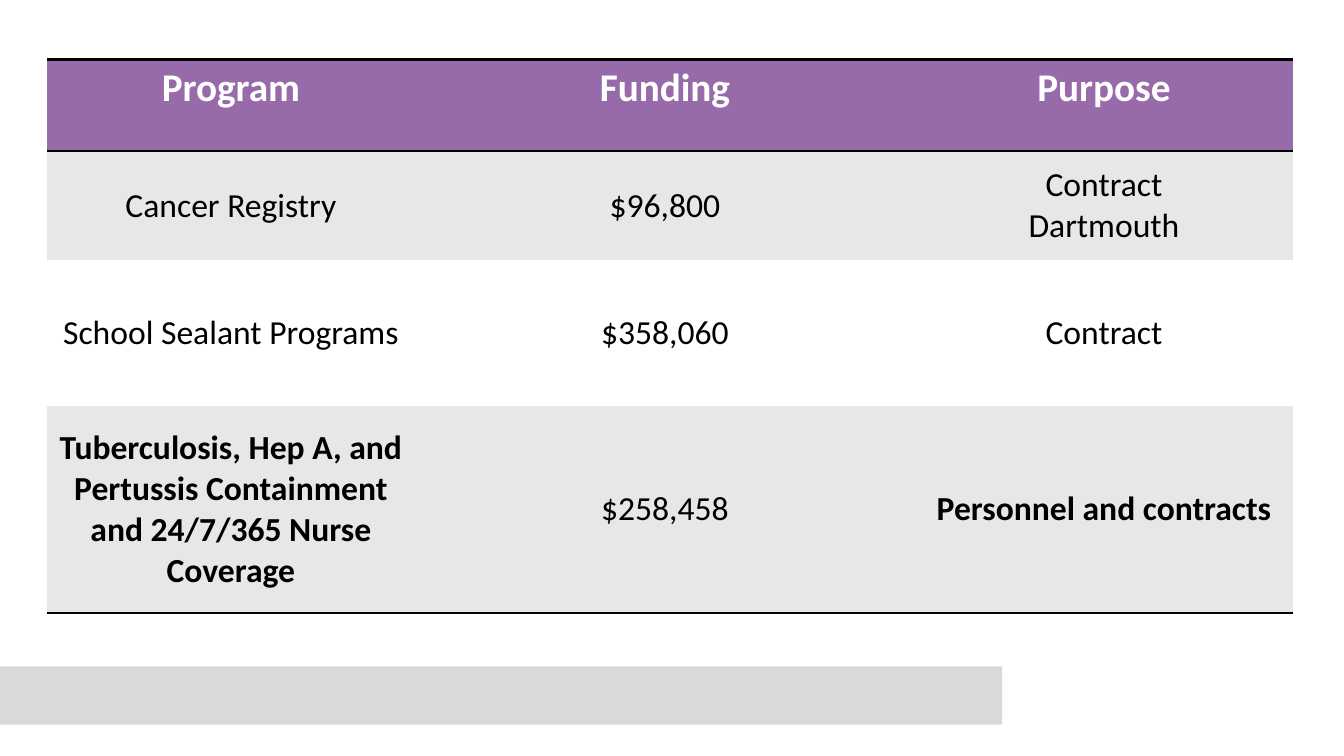
"""Builds a slide with a table of health programs, their funding and purpose."""
from dataclasses import dataclass

from lxml import etree
from pptx import Presentation
from pptx.dml.color import RGBColor
from pptx.enum import shapes, text
from pptx.oxml import ns
from pptx.util import Inches, Pt

HEADER = ("Program", "Funding", "Purpose")
PROGRAMS = [
    ("Cancer Registry", "$96,800", "Contract\nDartmouth"),
    ("School Sealant Programs", "$358,060", "Contract"),
    ("Tuberculosis, Hep A, and Pertussis Containment and 24/7/365 Nurse Coverage",
     "$258,458", "Personnel and contracts"),
]
BOLD = {HEADER[0], HEADER[1], HEADER[2], PROGRAMS[2][0], PROGRAMS[2][2]}
COL_WIDTHS = (3.64, 4.97, 3.74)
ROW_HEIGHTS = (0.91, 1.08, 1.45, 2.05)
TABLE_AT = (0.47, 0.59)
FOOTER_BAR = (0, 6.61, 9.94, 0.58)


@dataclass(frozen=True)
class Theme:
    font: str = "Calibri"
    header_size: int = 28
    body_size: int = 24
    header_fill: str = "976BA9"
    header_text: str = "FFFFFF"
    body_text: str = "000000"
    bands: tuple = ("FFFFFF", "E7E7E7")
    bar: str = "D9D9D9"
    rule: str = "000000"
    rule_width: int = 2


THEME = Theme()


def set_borders(cell, ruled):
    tc_pr = cell._tc.get_or_add_tcPr()
    for side in ("L", "R", "T", "B"):
        ln = etree.SubElement(tc_pr, ns.qn(f"a:ln{side}"))
        if side in ruled:
            ln.set("w", str(Pt(THEME.rule_width)))
            fill = etree.SubElement(ln, ns.qn("a:solidFill"))
            etree.SubElement(fill, ns.qn("a:srgbClr")).set("val", THEME.rule)
        else:
            ln.set("w", "0")
            etree.SubElement(ln, ns.qn("a:noFill"))


def fill_cell(cell, content, fill, color, size):
    cell.fill.solid()
    cell.fill.fore_color.rgb = RGBColor.from_string(fill)
    tf = cell.text_frame
    for i, line in enumerate(content.split("\n")):
        p = tf.add_paragraph() if i else tf.paragraphs[0]
        p.alignment = text.PP_ALIGN.CENTER
        r = p.add_run()
        r.text = line
        r.font.name = THEME.font
        r.font.size = Pt(size)
        r.font.bold = content in BOLD
        r.font.color.rgb = RGBColor.from_string(color)


def add_footer_bar(s):
    sp = s.shapes.add_shape(shapes.MSO_SHAPE.RECTANGLE, *map(Inches, FOOTER_BAR))
    sp.shadow.inherit = False
    sp.fill.solid()
    sp.fill.fore_color.rgb = RGBColor.from_string(THEME.bar)
    sp.line.fill.background()


def add_program_table(s):
    rows = [HEADER, *PROGRAMS]
    size = (sum(COL_WIDTHS), sum(ROW_HEIGHTS))
    table = s.shapes.add_table(len(rows), len(HEADER),
                               *map(Inches, TABLE_AT + size)).table
    for col, width in zip(table.columns, COL_WIDTHS):
        col.width = Inches(width)
    for row, height in zip(table.rows, ROW_HEIGHTS):
        row.height = Inches(height)
    ruled = {0: "TB", 1: "T", len(rows) - 1: "B"}
    for i, row in enumerate(rows):
        for j, content in enumerate(row):
            cell = table.cell(i, j)
            set_borders(cell, ruled.get(i, ""))
            if i == 0:
                fill_cell(cell, content, THEME.header_fill, THEME.header_text,
                          THEME.header_size)
            else:
                cell.vertical_anchor = text.MSO_ANCHOR.MIDDLE
                fill_cell(cell, content, THEME.bands[i % 2], THEME.body_text,
                          THEME.body_size)


def main():
    prs = Presentation()
    prs.slide_width, prs.slide_height = Inches(13.33), Inches(7.5)
    s = prs.slides.add_slide(prs.slide_layouts[6])
    add_footer_bar(s)
    add_program_table(s)
    prs.save("out.pptx")


if __name__ == "__main__":
    main()
